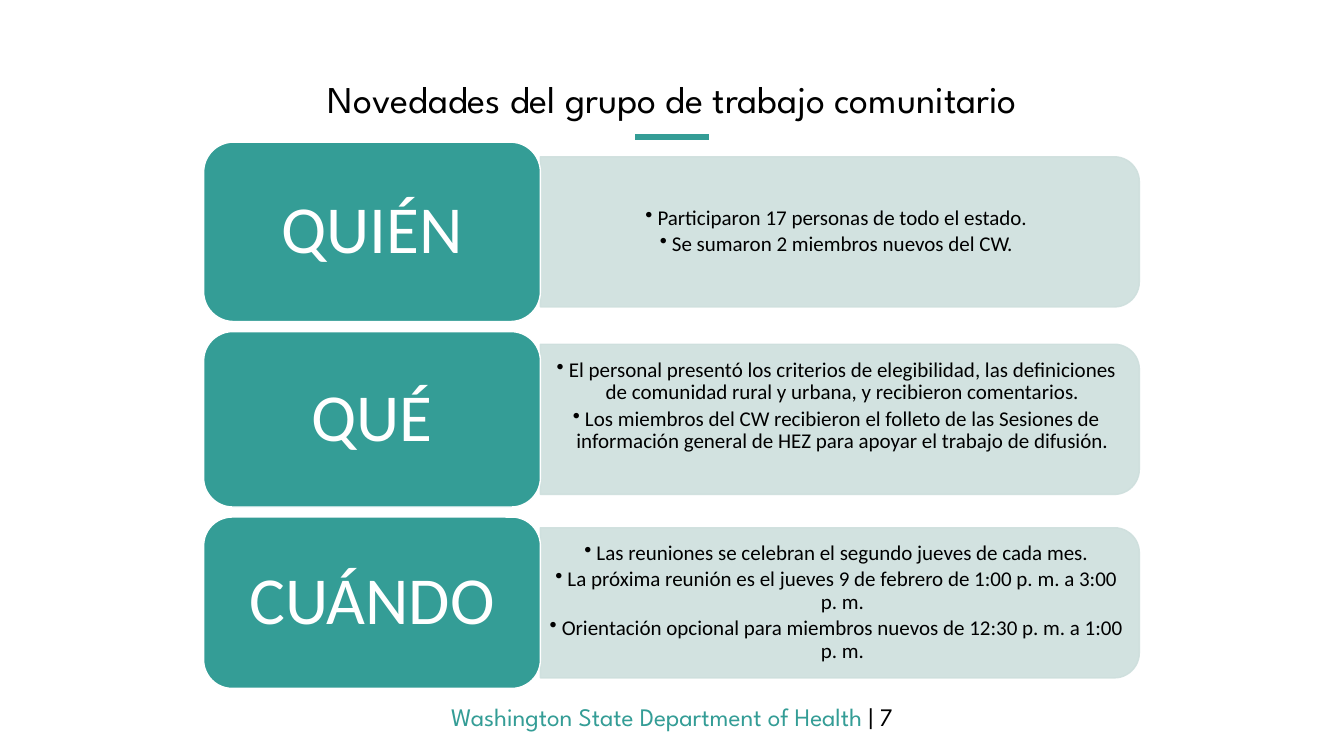
"""Build the slide on community work group news: who, what and when."""
from dataclasses import dataclass

from lxml.etree import SubElement
from pptx import Presentation
from pptx.dml.color import RGBColor
from pptx.enum.shapes import MSO_CONNECTOR, MSO_SHAPE
from pptx.enum.text import MSO_ANCHOR, PP_ALIGN
from pptx.oxml.ns import qn
from pptx.util import Inches, Pt

TEAL, MIST, WHITE, BLACK = "349D96", "CEDFDD", "FFFFFF", "000000"
HEADING_FONT, BODY_FONT = "League Spartan", "Calibri"
SLIDE_W, LABEL_X, LABEL_W = 13.33, 2.02, 3.34
PANEL_X, PANEL_W, PANEL_H = 5.36, 5.94, 1.49
DETAIL_W, DETAIL_H = 5.87, 1.34
FIRST_TOP, ROW_GAP = 1.41, 0.1


@dataclass
class Topic:
    label: str
    height: float
    details: list[str]
    bottom_inset: float = 0.03


TOPICS = [
    Topic("QUIÉN", 1.78, [
        "Participaron 17 personas de todo el estado.",
        "Se sumaron 2 miembros nuevos del CW.",
    ]),
    Topic("QUÉ", 1.74, [
        "El personal presentó los criterios de elegibilidad, las definiciones "
        "de comunidad rural y urbana, y recibieron comentarios.",
        "Los miembros del CW recibieron el folleto de las Sesiones de "
        "información general de HEZ para apoyar el trabajo de difusión.",
    ], bottom_inset=0.29),
    Topic("CUÁNDO", 1.7, [
        "Las reuniones se celebran el segundo jueves de cada mes.",
        "La próxima reunión es el jueves 9 de febrero de 1:00 p. m. a 3:00 p. m.",
        "Orientación opcional para miembros nuevos de 12:30 p. m. a 1:00 p. m.",
    ]),
]


def rgb(value: str) -> RGBColor:
    return RGBColor.from_string(value)


def apply_format(target, values: dict) -> None:
    for name, value in values.items():
        setattr(target, name, value)


def set_frame(frame, left: float, top: float, right: float, bottom: float) -> None:
    apply_format(frame, {
        "word_wrap": True, "vertical_anchor": MSO_ANCHOR.MIDDLE,
        "margin_left": Inches(left), "margin_top": Inches(top),
        "margin_right": Inches(right), "margin_bottom": Inches(bottom),
    })


def write(paragraph, text: str, font: str, size: int, color: str) -> None:
    run = paragraph.add_run()
    run.text = text
    apply_format(run.font, {"name": font, "size": Pt(size)})
    run.font.color.rgb = rgb(color)
    paragraph.alignment = PP_ALIGN.CENTER


def add_block(slide, kind, box: tuple, fill: str, line: str):
    block = slide.shapes.add_shape(kind, *map(Inches, box))
    block.shadow.inherit = False
    block.fill.solid()
    block.fill.fore_color.rgb = rgb(fill)
    block.line.color.rgb = rgb(line)
    block.line.width = Pt(1)
    return block


def add_panel(slide, center: float) -> None:
    box = (PANEL_X + (PANEL_W - PANEL_H) / 2, center - PANEL_W / 2, PANEL_H, PANEL_W)
    panel = add_block(slide, MSO_SHAPE.ROUND_2_SAME_RECTANGLE, box, MIST, MIST)
    panel.rotation = 90
    for color in panel._element.spPr.iter(qn("a:srgbClr")):
        SubElement(color, qn("a:alpha"), val="90000")


def add_details(slide, topic: Topic, center: float) -> None:
    box = (PANEL_X, center - DETAIL_H / 2, DETAIL_W, DETAIL_H)
    frame = slide.shapes.add_textbox(*map(Inches, box)).text_frame
    set_frame(frame, 0.06, 0.03, 0.06, topic.bottom_inset)
    for index, detail in enumerate(topic.details):
        paragraph = frame.add_paragraph() if index else frame.paragraphs[0]
        write(paragraph, detail, BODY_FONT, 15, BLACK)
        apply_format(paragraph, {"line_spacing": 0.9, "space_after": Pt(2.5)})
        properties = paragraph._p.get_or_add_pPr()
        properties.set("marL", str(Inches(0.12)))
        properties.set("indent", str(Inches(-0.12)))
        SubElement(properties, qn("a:buChar"), char="•")


def add_topic(slide, topic: Topic, top: float) -> None:
    center = top + topic.height / 2
    add_panel(slide, center)
    add_details(slide, topic, center)
    box = (LABEL_X, top, LABEL_W, topic.height)
    label = add_block(slide, MSO_SHAPE.ROUNDED_RECTANGLE, box, TEAL, WHITE)
    set_frame(label.text_frame, 0.2, 0.1, 0.2, 0.1)
    paragraph = label.text_frame.paragraphs[0]
    write(paragraph, topic.label, BODY_FONT, 48, WHITE)
    paragraph.line_spacing = 0.9


def add_heading(slide) -> None:
    title = slide.shapes.title
    apply_format(title, {"left": Inches(0.01), "top": Inches(0.74),
                         "width": Inches(13.32), "height": Inches(0.53)})
    set_frame(title.text_frame, 0.1, 0.05, 0.1, 0.05)
    paragraph = title.text_frame.paragraphs[0]
    write(paragraph, "Novedades del grupo de trabajo comunitario", HEADING_FONT, 27, BLACK)
    paragraph.line_spacing = 0.9
    underline = slide.shapes.add_connector(
        MSO_CONNECTOR.STRAIGHT, *map(Inches, (6.3, 1.36, 7.03, 1.36)))
    underline.line.color.rgb = rgb(TEAL)
    underline.line.width = Pt(4)
    SubElement(underline._element.spPr, qn("a:effectLst"))


def add_footer(slide) -> None:
    box = (0, 6.91, SLIDE_W, 0.4)
    frame = slide.shapes.add_textbox(*map(Inches, box)).text_frame
    frame.word_wrap = True
    paragraph = frame.paragraphs[0]
    write(paragraph, "Washington State Department of Health ", HEADING_FONT, 18, TEAL)
    write(paragraph, "| 7", HEADING_FONT, 18, BLACK)


def main() -> None:
    deck = Presentation()
    apply_format(deck, {"slide_width": Inches(SLIDE_W), "slide_height": Inches(7.5)})
    slide = deck.slides.add_slide(deck.slide_layouts[5])
    add_heading(slide)
    add_footer(slide)
    top = FIRST_TOP
    for topic in TOPICS:
        add_topic(slide, topic, top)
        top += topic.height + ROW_GAP
    deck.save("out.pptx")


if __name__ == "__main__":
    main()
